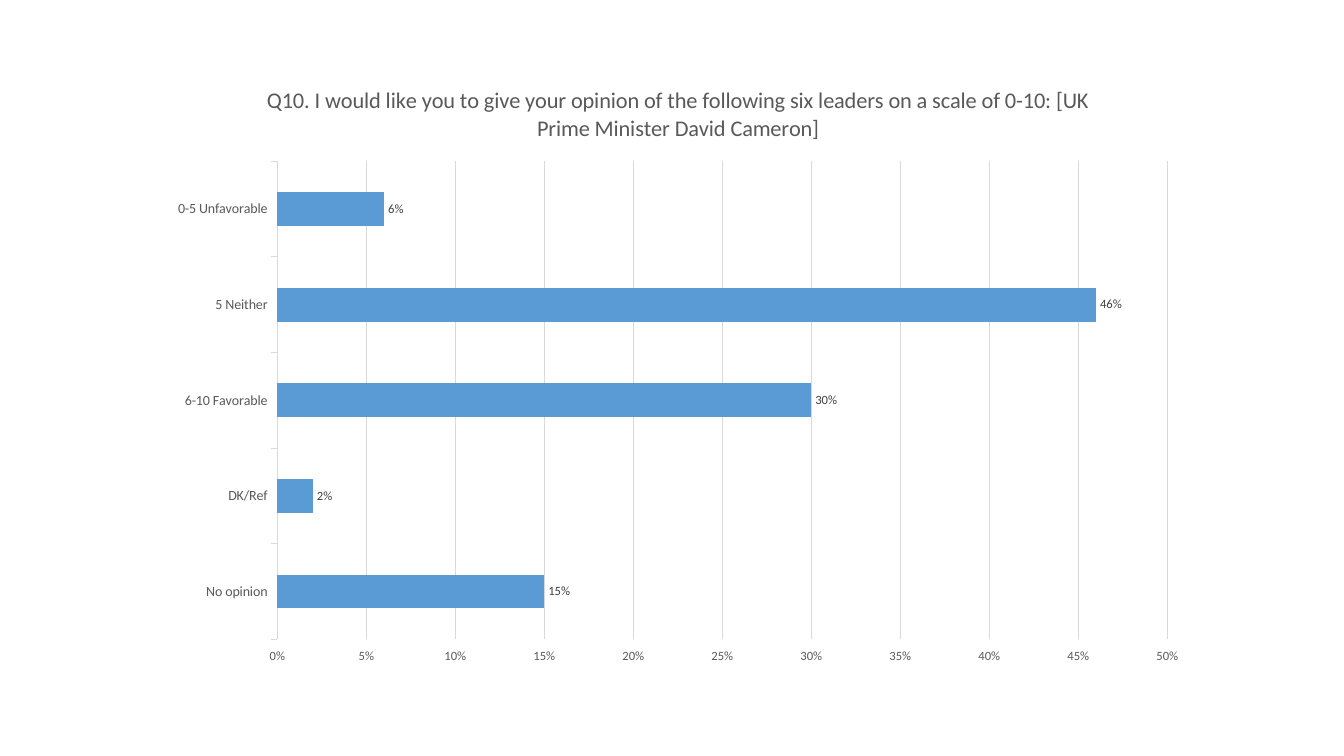
"""Build a slide with a bar chart of opinions on one leader."""
import dataclasses

import pptx
import pptx.chart.axis
import pptx.chart.data
import pptx.chart.series
import pptx.dml.color
import pptx.enum.chart
import pptx.text.text
import pptx.util

FONT = "Calibri"
BAR_COLOR = "5B9BD5"
TEXT_COLOR = "595959"
LABEL_COLOR = "404040"
LINE_COLOR = "D9D9D9"
TITLE = (
    "Q10. I would like you to give your opinion of the following six leaders "
    "on a scale of 0-10: [UK Prime Minister David Cameron]"
)


@dataclasses.dataclass(frozen=True)
class Answer:
    """One answer and its share of respondents."""

    label: str
    share: float


ANSWERS = [
    Answer("No opinion", 0.15),
    Answer("DK/Ref", 0.02),
    Answer("6-10 Favorable", 0.30),
    Answer("5 Neither", 0.46),
    Answer("0-5 Unfavorable", 0.06),
]


def rgb(value: str) -> pptx.dml.color.RGBColor:
    """Turn a hex string into a colour."""
    return pptx.dml.color.RGBColor.from_string(value)


def format_font(font: pptx.text.text.Font, size: float, color: str = TEXT_COLOR) -> None:
    """Set the face, size and colour of a font."""
    font.name = FONT
    font.size = pptx.util.Pt(size)
    font.bold = False
    font.color.rgb = rgb(color)


def write_text(
    frame: pptx.text.text.TextFrame, text: str, *, size: float, color: str = TEXT_COLOR
) -> None:
    """Write formatted text into a text frame."""
    paragraph = frame.paragraphs[0]
    format_font(paragraph.font, size, color)
    run = paragraph.add_run()
    run.text = text
    format_font(run.font, size, color)


def format_line(line: pptx.dml.line.LineFormat) -> None:
    """Give a chart line its thin grey stroke."""
    line.color.rgb = rgb(LINE_COLOR)
    line.width = pptx.util.Pt(0.75)


def format_category_axis(axis: pptx.chart.axis.CategoryAxis) -> None:
    """Style the axis of answers."""
    axis.major_tick_mark = pptx.enum.chart.XL_TICK_MARK.OUTSIDE
    axis.has_major_gridlines = False
    format_line(axis.format.line)
    format_font(axis.tick_labels.font, 10)


def format_value_axis(axis: pptx.chart.axis.ValueAxis) -> None:
    """Style the axis of shares."""
    axis.minimum_scale = 0
    axis.maximum_scale = 0.5
    axis.major_unit = 0.05
    axis.major_tick_mark = pptx.enum.chart.XL_TICK_MARK.OUTSIDE
    axis.format.line.fill.background()
    axis.has_major_gridlines = True
    format_line(axis.major_gridlines.format.line)
    axis.tick_labels.number_format = "0%"
    axis.tick_labels.number_format_is_linked = False
    format_font(axis.tick_labels.font, 9)


def format_bars(series: pptx.chart.series.BarSeries) -> None:
    """Fill the bars and label their ends."""
    series.format.fill.solid()
    series.format.fill.fore_color.rgb = rgb(BAR_COLOR)
    labels = series.data_labels
    labels.show_value = True
    labels.number_format = "0%"
    labels.number_format_is_linked = False
    labels.position = pptx.enum.chart.XL_LABEL_POSITION.OUTSIDE_END
    format_font(labels.font, 9, LABEL_COLOR)


def main() -> None:
    """Build and save the presentation."""
    presentation = pptx.Presentation()
    presentation.slide_width = pptx.util.Cm(33.87)
    presentation.slide_height = pptx.util.Cm(19.05)
    slide = presentation.slides.add_slide(presentation.slide_layouts[6])

    data = pptx.chart.data.CategoryChartData(number_format="0%")
    data.categories = [answer.label for answer in ANSWERS]
    data.add_series("Series 1", [answer.share for answer in ANSWERS])
    chart = slide.shapes.add_chart(
        pptx.enum.chart.XL_CHART_TYPE.BAR_CLUSTERED,
        pptx.util.Cm(3.96),
        pptx.util.Cm(1.6),
        pptx.util.Cm(26.26),
        pptx.util.Cm(15.44),
        data,
    ).chart

    format_font(chart.font, 10, "000000")
    chart.has_legend = False
    chart.has_title = True
    chart.chart_title.include_in_layout = False
    write_text(chart.chart_title.text_frame, TITLE, size=16)
    format_category_axis(chart.category_axis)
    format_value_axis(chart.value_axis)
    plot = chart.plots[0]
    plot.gap_width = 182
    plot.vary_by_categories = False
    format_bars(plot.series[0])

    presentation.save("out.pptx")


if __name__ == "__main__":
    main()
